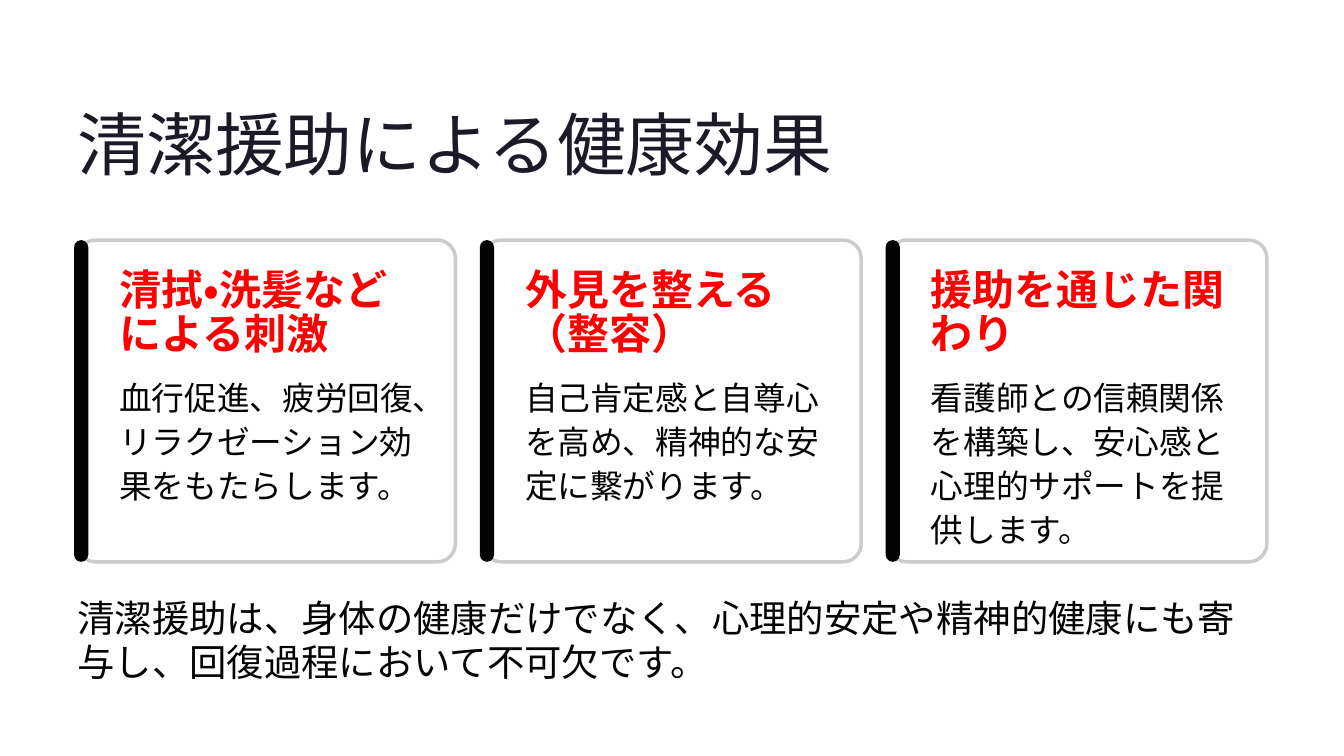
from pptx import Presentation
from pptx.dml.color import RGBColor
from pptx.enum.lang import MSO_LANGUAGE_ID as Lang
from pptx.enum.shapes import MSO_SHAPE as Shape
from pptx.enum.text import MSO_ANCHOR as Anchor, MSO_AUTO_SIZE as Auto, PP_ALIGN as Align
from pptx.util import Cm, Pt

PAPER = RGBColor(0xFE, 0xFE, 0xFE)
NAVY = RGBColor(0x1B, 0x1B, 0x27)
INK = RGBColor(0x03, 0x03, 0x03)
RED = RGBColor(0xFF, 0x00, 0x00)
GREY = RGBColor(0xCC, 0xCC, 0xCC)

CARDS = [
    ("清拭・洗髪などによる刺激", "血行促進、疲労回復、リラクゼーション効果をもたらします。"),
    ("外見を整える（整容）", "自己肯定感と自尊心を高め、精神的な安定に繋がります。"),
    ("援助を通じた関わり", "看護師との信頼関係を構築し、安心感と心理的サポートを提供します。"),
]
CLOSING = "清潔援助は、身体の健康だけでなく、心理的安定や精神的健康にも寄与し、回復過程において不可欠です。"


def write(item, text, font="Cabin", size=28, color=INK, bold=False, lead=37.5, wrap=True):
    """Put formatted text into a shape without insets."""
    frame = item.text_frame
    frame.margin_left = frame.margin_right = frame.margin_top = frame.margin_bottom = 0
    frame.word_wrap = wrap
    frame.auto_size = Auto.NONE
    frame.vertical_anchor = Anchor.TOP
    para = frame.paragraphs[0]
    para.alignment = Align.LEFT
    para.line_spacing = Pt(lead)
    run = para.add_run()
    run.text = text
    run.font.name = font
    run.font.size = Pt(size)
    run.font.bold = bold
    run.font.color.rgb = color
    run.font.language_id = Lang.JAPANESE


def add_panel(slide, box, fill, round_by, line=None):
    """Draw a rounded panel in the given box."""
    panel = slide.shapes.add_shape(Shape.ROUNDED_RECTANGLE, *box)
    panel.adjustments[0] = round_by
    panel.shadow.inherit = False
    panel.fill.solid()
    panel.fill.fore_color.rgb = fill
    if line is None:
        panel.line.fill.background()
    else:
        panel.line.color.rgb = line
        panel.line.width = Pt(3)


def add_title(slide, box, text):
    """Move and format the title placeholder."""
    title = slide.shapes.title
    title.left, title.top, title.width, title.height = box
    write(title, text, font="Inter", size=59, color=NAVY, lead=74, wrap=False)


def add_card(slide, box, head, body):
    """Draw one card with its side bar, heading and body."""
    left, top, width, height = box
    add_panel(slide, box, PAPER, 0.056, line=GREY)
    add_panel(slide, (left - Cm(0.1), top, Cm(0.43), height), INK, 0.5)
    inner, span = left + Cm(1.27), width - Cm(2.21)
    label = slide.shapes.add_textbox(inner, top + Cm(0.94), span, Cm(2.62))
    write(label, head, font="Inter", size=36, color=RED, bold=True, lead=37)
    note = slide.shapes.add_textbox(inner, top + Cm(4.04), span, Cm(4.01))
    write(note, body)


def add_cards(slide, box, cards, gap):
    """Share the box equally among the cards."""
    left, top, width, height = box
    each = (width - gap * (len(cards) - 1)) // len(cards)
    for i, (head, body) in enumerate(cards):
        add_card(slide, (left + i * (each + gap), top, each, height), head, body)


def add_closing(slide, box, text):
    """Write the closing sentence in the given box."""
    write(slide.shapes.add_textbox(*box), text, size=32)


def main():
    """Build and save the slide."""
    deck = Presentation()
    deck.slide_width, deck.slide_height = Cm(40.64), Cm(22.86)
    slide = deck.slides.add_slide(deck.slide_layouts[5])
    slide.background.fill.solid()
    slide.background.fill.fore_color.rgb = PAPER
    left, width = Cm(2.34), Cm(35.97)
    add_title(slide, (left, Cm(2.97), Cm(22.94), Cm(2.62)), "清潔援助による健康効果")
    add_cards(slide, (left, Cm(7.26), width, Cm(9.73)), CARDS, Cm(0.84))
    add_closing(slide, (left, Cm(18.03), width, Cm(2.67)), CLOSING)
    deck.save("out.pptx")


if __name__ == "__main__":
    main()
